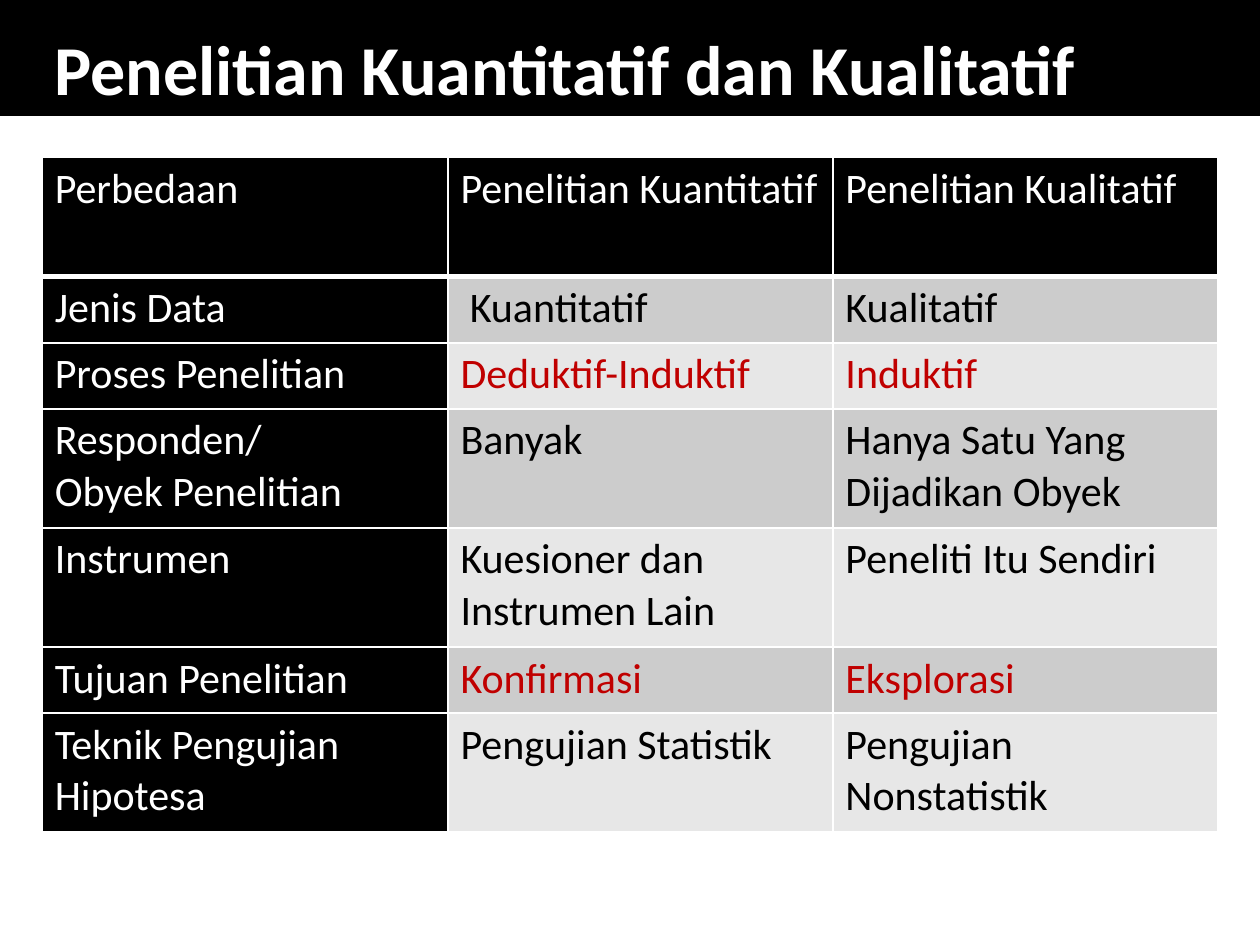
from lxml import etree
from pptx import Presentation
from pptx.dml.color import RGBColor
from pptx.enum import shapes, text
from pptx.oxml import ns
from pptx.util import Cm, Pt

TITLE = "Penelitian Kuantitatif dan Kualitatif"
ROWS = [
    ("Perbedaan", "Penelitian Kuantitatif", "Penelitian Kualitatif"),
    ("Jenis Data", "Kuantitatif", "Kualitatif"),
    ("Proses Penelitian", "Deduktif-Induktif", "Induktif"),
    ("Responden/\nObyek Penelitian", "Banyak", "Hanya Satu Yang\nDijadikan Obyek"),
    ("Instrumen", "Kuesioner dan\nInstrumen Lain", "Peneliti Itu Sendiri"),
    ("Tujuan Penelitian", "Konfirmasi", "Eksplorasi"),
    ("Teknik Pengujian\nHipotesa", "Pengujian Statistik", "Pengujian Nonstatistik"),
]
TALL_ROWS = {0, 3, 4, 6}
RED_ROWS = {2, 5}
INDENTED_CELL = (1, 1)
COLUMN_WIDTHS = (8.18, 7.76, 7.76)
TALL, SHORT = 2.4, 1.33
BLACK, WHITE, RED = "000000", "FFFFFF", "C00000"
BANDS = ("E7E7E7", "CCCCCC")


def paint(fill, color):
    fill.solid()
    fill.fore_color.rgb = RGBColor.from_string(color)


def style(frame, size, color, bold=False):
    for para in frame.paragraphs:
        para.alignment = text.PP_ALIGN.LEFT
        for span in para.runs:
            span.font.name = "Calibri"
            span.font.size = Pt(size)
            span.font.bold = bold
            span.font.color.rgb = RGBColor.from_string(color)


def add_borders(cell, top, bottom):
    """Draw white cell borders; call before the fill, which must follow them."""
    properties = cell._tc.get_or_add_tcPr()
    for side, width in (("L", 1), ("R", 1), ("T", top), ("B", bottom)):
        line = etree.SubElement(properties, ns.qn(f"a:ln{side}"), w=str(Pt(width)))
        fill = etree.SubElement(line, ns.qn("a:solidFill"))
        etree.SubElement(fill, ns.qn("a:srgbClr"), val=WHITE)


def add_title(page):
    band = page.shapes.add_shape(shapes.MSO_SHAPE.RECTANGLE, 0, 0, Cm(25.4), Cm(2.33))
    band.shadow.inherit = False
    paint(band.fill, BLACK)
    paint(band.line.fill, BLACK)
    band.line.width = Pt(1)

    box = page.shapes.add_textbox(Cm(0.85), Cm(0.21), Cm(24.55), Cm(2.12))
    frame = box.text_frame
    frame.word_wrap = True
    frame.vertical_anchor = text.MSO_ANCHOR.BOTTOM
    frame.text = TITLE
    style(frame, 40, WHITE, bold=True)


def add_comparison(page):
    heights = [TALL if r in TALL_ROWS else SHORT for r in range(len(ROWS))]
    table = page.shapes.add_table(
        len(ROWS), len(COLUMN_WIDTHS), Cm(0.85), Cm(3.18),
        Cm(sum(COLUMN_WIDTHS)), Cm(sum(heights))).table
    for column, width in zip(table.columns, COLUMN_WIDTHS):
        column.width = Cm(width)
    for r, (labels, height) in enumerate(zip(ROWS, heights)):
        table.rows[r].height = Cm(height)
        for c, label in enumerate(labels):
            cell = table.cell(r, c)
            heading = r == 0 or c == 0
            cell.text_frame.text = label
            if (r, c) == INDENTED_CELL:
                cell.margin_left = Cm(0.44)
            color = WHITE if heading else RED if r in RED_ROWS else BLACK
            style(cell.text_frame, 24, color)
            add_borders(cell, top=3 if r == 1 else 1, bottom=3 if r == 0 else 1)
            paint(cell.fill, BLACK if heading else BANDS[r % 2])


def main():
    deck = Presentation()
    deck.slide_width, deck.slide_height = Cm(25.4), Cm(19.05)
    page = deck.slides.add_slide(deck.slide_layouts[6])
    add_title(page)
    add_comparison(page)
    deck.save("out.pptx")


if __name__ == "__main__":
    main()
